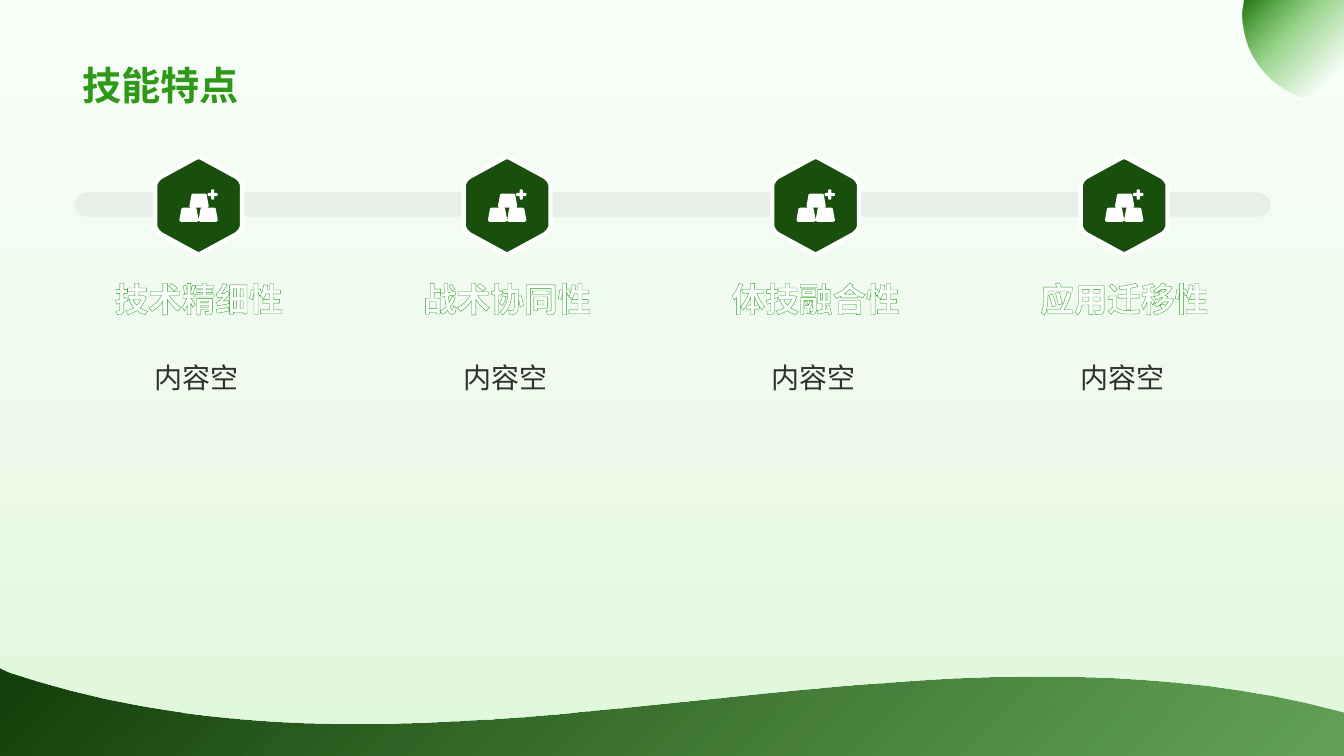
import pptx
import pptx.dml.color
import pptx.enum.shapes
import pptx.enum.text
import pptx.oxml
import pptx.oxml.ns
import pptx.util

COLUMNS, ROWS = 13.33, 7.5
QN = pptx.oxml.ns.qn
ALIGN = pptx.enum.text.PP_ALIGN
ANCHOR = pptx.enum.text.MSO_ANCHOR
SHAPE = pptx.enum.shapes.MSO_SHAPE

HEADINGS = ["技术精细性", "战术协同性", "体技融合性", "应用迁移性"]
PITCH = 3.06
HEXAGON_CORNER = [(1, -48), (3, -47), (5, -46), (38, -28), (40, -26),
                  (41, -25), (42, -23), (43, -21), (43, -18)]
SPARK_CORNER = [(1, -5), (1.5, -4), (1.5, -1.5), (4, -1.5), (5, -1)]
INGOT = [(4, 0), (15, 0), (16.5, 0.5), (17, 1), (19, 12), (19, 13), (17.5, 14),
         (1.5, 14), (0, 13), (0, 12), (2, 1), (2.5, 0.5)]


def rgb(color):
    return pptx.dml.color.RGBColor.from_string(color)


def set_alpha(parent, percent):
    color = parent.find(".//" + QN("a:srgbClr"))
    color.append(color.makeelement(QN("a:alpha"), {"val": str(percent * 1000)}))


def gradient(fill, holder, stops, angle):
    fill.gradient()
    grad = holder.find(".//" + QN("a:gradFill"))
    stop_list = grad.find(QN("a:gsLst"))
    for old in list(stop_list):
        stop_list.remove(old)
    for position, color, *alpha in stops:
        stop = stop_list.makeelement(QN("a:gs"), {"pos": str(position * 1000)})
        stop.append(stop.makeelement(QN("a:srgbClr"), {"val": color}))
        if alpha:
            set_alpha(stop, alpha[0])
        stop_list.append(stop)
    grad.find(QN("a:lin")).set("ang", str(angle * 60000))


def curve(p0, p1, p2, p3, steps=40):
    points = []
    for i in range(steps + 1):
        t = i / steps
        weights = ((1 - t) ** 3, 3 * t * (1 - t) ** 2, 3 * t * t * (1 - t), t ** 3)
        points.append(tuple(sum(w * p[axis] for w, p in zip(weights, (p0, p1, p2, p3)))
                            for axis in (0, 1)))
    return points


def mirror(corner):
    right = corner + [(x, -y) for x, y in reversed(corner)]
    return right + [(-x, -y) for x, y in right]


def place(points, left, top):
    return [(left + x / 100, top + y / 100) for x, y in points]


def write(tf, text, size, font, color=None, stops=None, angle=0, bold=False,
          align=ALIGN.LEFT, spacing=None, outline=None):
    p = tf.paragraphs[0]
    p.alignment = align
    if spacing:
        p.line_spacing = spacing
    r = p.add_run()
    r.text = text
    r.font.size = pptx.util.Pt(size)
    r.font.bold = bold
    r.font.name = font
    props = r.font._element
    props.find(QN("a:latin")).addnext(props.makeelement(QN("a:ea"), {"typeface": font}))
    if stops:
        gradient(r.font.fill, props, stops, angle)
    else:
        r.font.color.rgb = rgb(color)
    if outline:
        line_color, width = outline
        props.insert(0, pptx.oxml.parse_xml(
            f'<a:ln {pptx.oxml.ns.nsdecls("a")} w="{pptx.util.Pt(width)}"><a:solidFill>'
            f'<a:srgbClr val="{line_color}"/></a:solidFill></a:ln>'))


class Deck:
    font = "Noto Sans CJK SC"
    title_font = "Lato"
    dark = "184F0C"
    white = "FFFFFF"

    def __init__(self):
        self.prs = pptx.Presentation()
        self.prs.slide_width = pptx.util.Emu(12192000)
        self.prs.slide_height = pptx.util.Emu(6858000)
        self.column = self.prs.slide_width / COLUMNS
        self.row = self.prs.slide_height / ROWS
        self.s = self.prs.slides.add_slide(self.prs.slide_layouts[6])
        self.shapes = self.s.shapes

    def box(self, left, top, width, height):
        return [round(v) for v in (left * self.column, top * self.row,
                                   width * self.column, height * self.row)]

    def group(self):
        self.shapes = self.s.shapes.add_group_shape().shapes

    def background(self, stops, angle):
        gradient(self.s.background.fill, self.s.element, stops, angle)

    def paint(self, sp, color=None, alpha=None, stops=None, angle=0, line=None):
        sp.shadow.inherit = False
        if stops:
            gradient(sp.fill, sp._element.spPr, stops, angle)
        else:
            sp.fill.solid()
            sp.fill.fore_color.rgb = rgb(color)
            if alpha:
                set_alpha(sp._element.spPr, alpha)
        if line:
            sp.line.color.rgb = rgb(line[0])
            sp.line.width = pptx.util.Pt(line[1])
        else:
            sp.line.fill.background()

    def shape(self, kind, place, **style):
        sp = self.shapes.add_shape(kind, *self.box(*place))
        if kind == SHAPE.ROUNDED_RECTANGLE:
            sp.adjustments[0] = 0.5
        self.paint(sp, **style)

    def outline(self, *contours, **style):
        first, *others = [[(x * self.column, y * self.row) for x, y in contour]
                          for contour in contours]
        builder = self.shapes.build_freeform(*first[0])
        builder.add_line_segments(first[1:], close=True)
        for contour in others:
            builder.move_to(*contour[0])
            builder.add_line_segments(contour[1:], close=True)
        self.paint(builder.convert_to_shape(), **style)

    def text(self, place, text, anchor=ANCHOR.TOP, **style):
        tf = self.shapes.add_textbox(*self.box(*place)).text_frame
        tf.word_wrap = True
        tf.vertical_anchor = anchor
        write(tf, text, **style)

    def skill(self, left, heading, content):
        self.group()
        self.outline(place(mirror(HEXAGON_CORNER), left + 1.97, 2.04),
                     color=self.dark, line=(self.white, 3))
        ingots = [place(INGOT, left + x, y)
                  for x, y in ((1.78, 2.06), (1.97, 2.06), (1.88, 1.92))]
        self.outline(*ingots, place(mirror(SPARK_CORNER), left + 2.11, 1.93),
                     color=self.white)
        self.text((left + 0.78, 2.64, 2.38, 0.56), heading, ANCHOR.MIDDLE, size=24,
                  font=self.font, color=self.white, bold=True, align=ALIGN.CENTER,
                  spacing=1.2, outline=("2BA325", 0.52))
        self.text((left + 0.76, 3.46, 2.38, 1.08), content, size=20, font=self.font,
                  color="2F2F2F", align=ALIGN.CENTER, spacing=1.2)


def main():
    deck = Deck()
    deck.background([(48, "FFFFFF"), (100, "E0F9DB")], 90)
    deck.shape(SHAPE.RECTANGLE, (0, 0, COLUMNS, ROWS),
               stops=[(0, "F9FEF8", 80), (100, "E0F9DB", 78)], angle=90)
    wave = curve((0.09, 6.67), (4.29, 8.08), (8.7, 6.02), (12.93, 6.97))
    deck.outline([(0, 6.63), *wave, (COLUMNS, 7.07), (COLUMNS, ROWS), (0, ROWS)],
                 stops=[(0, "133F0A"), (100, "237312", 65)], angle=45)
    lower_arc = curve((13.26, 1), (12.89, 1.03), (12.53, 0.82), (12.38, 0.46))
    upper_arc = curve((12.38, 0.46), (12.34, 0.35), (12.32, 0.24), (12.32, 0.13))
    deck.outline([(COLUMNS, 0), (COLUMNS, 0.99), *lower_arc, *upper_arc[1:], (12.34, 0)],
                 stops=[(0, "237312"), (41, "34AA1A", 47), (82, "34AA1A", 0)], angle=45)
    deck.text((0.72, 0.14, 11.88, 0.98), "技能特点", ANCHOR.BOTTOM, size=28,
              font=deck.title_font, bold=True, angle=85,
              stops=[(2, "46DE25"), (52, "2E9817"), (100, "184F0C")])
    deck.shape(SHAPE.ROUNDED_RECTANGLE, (0.74, 1.91, 11.86, 0.24), color="778495", alpha=10)
    for i, heading in enumerate(HEADINGS):
        deck.skill(i * PITCH, heading, "内容空")
    deck.prs.save("out.pptx")


if __name__ == "__main__":
    main()
